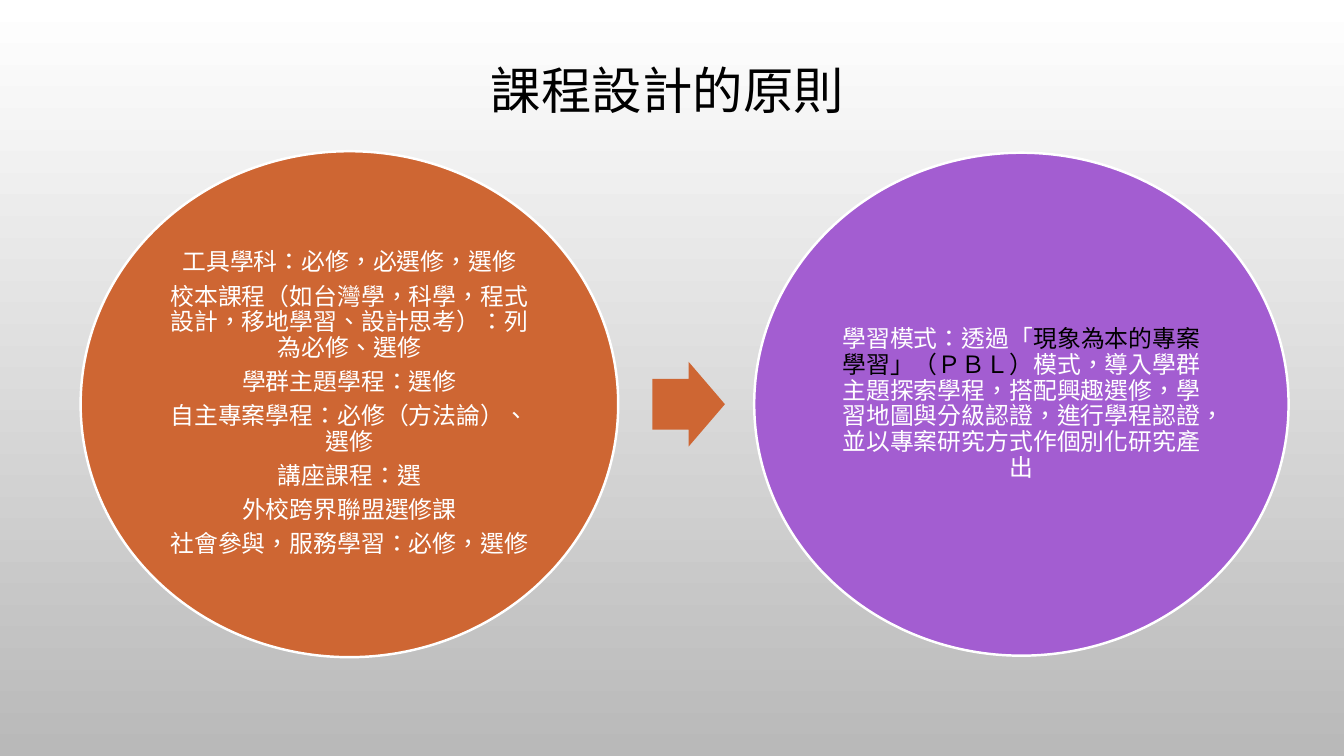
from dataclasses import dataclass

from lxml.etree import SubElement
from pptx import Presentation
from pptx.dml.color import RGBColor
from pptx.enum.shapes import MSO_SHAPE as Shape
from pptx.enum.text import MSO_ANCHOR as Anchor, PP_ALIGN as Align
from pptx.oxml.ns import qn
from pptx.util import Emu, Inches, Pt


@dataclass(frozen=True)
class Theme:
    orange: str = "CE6633"
    purple: str = "A35DD1"
    white: str = "FFFFFF"
    black: str = "000000"
    grey: str = "B9B9B9"
    latin: str = "Calibri"
    cjk: str = "Noto Sans CJK JP"
    title_size: float = 36
    body_size: float = 17
    outline: float = 1.75


@dataclass(frozen=True)
class Area:
    """Centre and size, in hundredths of the slide's width and height."""
    cx: float
    cy: float
    w: float
    h: float


@dataclass(frozen=True)
class Circle:
    area: Area
    fill: str
    paragraphs: list  # each paragraph is a list of (text, colour)


THEME = Theme()
WIDTH, HEIGHT = Inches(13.33), Inches(7.5)
MIDDLE_ROW = 53.47

TITLE = Area(49.66, 12.33, 67.5, 16.67)
ARROW = Area(51.24, MIDDLE_ROW, 5.4, 11.2)

COURSES = [
    "工具學科：必修，必選修，選修",
    "校本課程（如台灣學，科學，程式設計，移地學習、設計思考）：列為必修、選修",
    "學群主題學程：選修",
    "自主專案學程：必修（方法論）、選修",
    "講座課程：選",
    "外校跨界聯盟選修課",
    "社會參與，服務學習：必修，選修",
]
LEARNING_MODE = [
    ("學習模式：透過「", THEME.white),
    ("現象為本的專案學習」（ＰＢＬ）", THEME.black),
    ("模式，導入學群主題探索學程，搭配興趣選修，學習地圖與分級認證，"
     "進行學程認證，並以專案研究方式作個別化研究產出", THEME.white),
]
CIRCLES = [
    Circle(Area(26, MIDDLE_ROW, 40, 66.93), THEME.orange,
           [[(course, THEME.white)] for course in COURSES]),
    Circle(Area(76, MIDDLE_ROW, 39.76, 66.53), THEME.purple, [LEARNING_MODE]),
]


def place(area: Area) -> tuple:
    """Turn an area into left, top, width and height."""
    return (Emu(int(WIDTH * (area.cx - area.w / 2) / 100)),
            Emu(int(HEIGHT * (area.cy - area.h / 2) / 100)),
            Emu(int(WIDTH * area.w / 100)),
            Emu(int(HEIGHT * area.h / 100)))


def add_run(p, text: str, *, size: float, color: str, font: str) -> None:
    r = p.add_run()
    r.text = text
    r.font.size = Pt(size)
    r.font.color.rgb = RGBColor.from_string(color)
    r.font.name = font
    props = r.font._element
    props.set("lang", "zh-TW")
    SubElement(props, qn("a:ea"), typeface=THEME.cjk)


def write(sp, paragraphs: list, *, size: float, font: str,
          after: float = 0, inset: float = 0.02) -> None:
    tf = sp.text_frame
    tf.word_wrap = True
    tf.vertical_anchor = Anchor.MIDDLE
    tf.margin_left = tf.margin_right = Inches(inset)
    tf.margin_top = tf.margin_bottom = Inches(inset)
    for i, runs in enumerate(paragraphs):
        p = tf.add_paragraph() if i else tf.paragraphs[0]
        p.alignment = Align.CENTER
        p.line_spacing = 0.9
        p.space_after = Pt(after)
        for text, color in runs:
            add_run(p, text, size=size, color=color, font=font)


def add_filled(s, kind: Shape, area: Area, fill: str):
    sp = s.shapes.add_shape(kind, *place(area))
    sp.shadow.inherit = False
    sp.fill.solid()
    sp.fill.fore_color.rgb = RGBColor.from_string(fill)
    sp.line.fill.background()
    return sp


def add_circle(s, circle: Circle) -> None:
    sp = add_filled(s, Shape.OVAL, circle.area, circle.fill)
    sp.line.color.rgb = RGBColor.from_string(THEME.white)
    sp.line.width = Pt(THEME.outline)
    write(sp, circle.paragraphs, size=THEME.body_size, font=THEME.latin, after=6)


def paint_background(s) -> None:
    fill = s.background.fill
    fill.gradient()
    fill.gradient_angle = 270
    for stop, position, color in zip(fill.gradient_stops, (0, 1),
                                     (THEME.white, THEME.grey)):
        stop.position = position
        stop.color.rgb = RGBColor.from_string(color)


def main() -> None:
    prs = Presentation()
    prs.slide_width, prs.slide_height = WIDTH, HEIGHT
    s = prs.slides.add_slide(prs.slide_layouts[6])
    paint_background(s)

    # Title
    title = s.shapes.add_textbox(*place(TITLE))
    write(title, [[("課程設計的原則", THEME.black)]],
          size=THEME.title_size, font=THEME.cjk)

    # Two circles, with the arrow leading from one to the other
    for circle in CIRCLES:
        add_circle(s, circle)
    arrow = add_filled(s, Shape.RIGHT_ARROW, ARROW, THEME.orange)
    arrow.adjustments[0], arrow.adjustments[1] = 0.6, 0.5

    prs.save("out.pptx")


if __name__ == "__main__":
    main()
